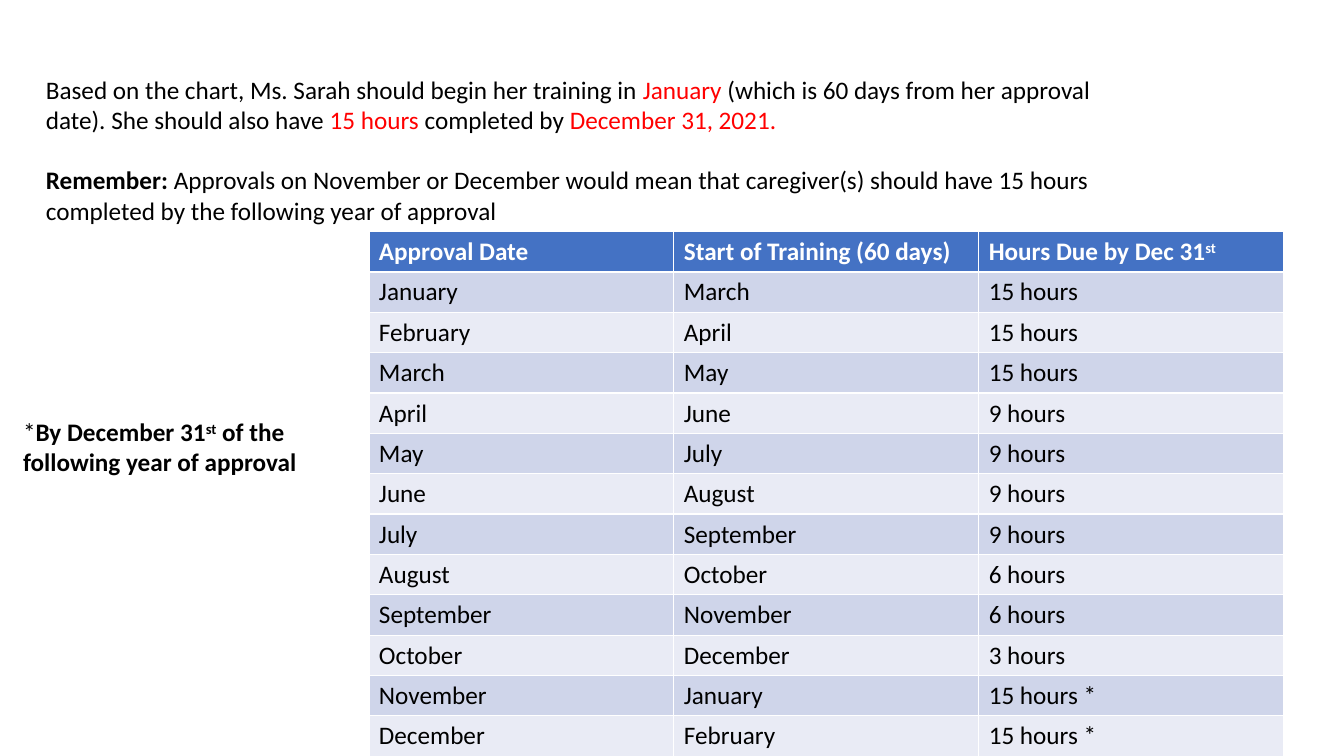
from dataclasses import dataclass

import pptx
import pptx.dml.color
import pptx.enum.text
import pptx.util

Pt = pptx.util.Pt


@dataclass(frozen=True)
class Theme:
    font: str = "Calibri"
    size: float = 18
    text: str = "000000"
    accent: str = "FF0000"
    header_text: str = "FFFFFF"
    header_fill: str = "4472C4"
    bands: tuple = ("CFD5EA", "E9EBF5")


THEME = Theme()
MONTHS = ["January", "February", "March", "April", "May", "June", "July",
          "August", "September", "October", "November", "December"]
HOURS = ["15 hours"] * 3 + ["9 hours"] * 4 + ["6 hours"] * 2 + ["3 hours"] + ["15 hours *"] * 2


def rgb(value):
    return pptx.dml.color.RGBColor.from_string(value)


def add_run(p, text, color=THEME.text, bold=False, superscript=False):
    r = p.add_run()
    r.text = text
    r.font.name = THEME.font
    r.font.size = Pt(THEME.size)
    r.font.bold = bold
    r.font.color.rgb = rgb(color)
    if superscript:
        r._r.get_or_add_rPr().set("baseline", "30000")


def add_text(s, box, paragraphs, gap=0):
    """Place a text box; each paragraph is a list of (text, run options)."""
    tf = s.shapes.add_textbox(*(Pt(v) for v in box)).text_frame
    tf.word_wrap = True
    tf.auto_size = pptx.enum.text.MSO_AUTO_SIZE.SHAPE_TO_FIT_TEXT
    for i, runs in enumerate(paragraphs):
        p = tf.add_paragraph() if i else tf.paragraphs[0]
        if i:
            p.space_before = Pt(gap)
        for text, options in runs:
            add_run(p, text, **options)


def add_answer(s, box):
    red = {"color": THEME.accent}
    add_text(s, box, [
        [("Based on the chart, Ms. Sarah should begin her training in ", {}),
         ("January", red),
         (" (which is 60 days from her approval date). She should also have ", {}),
         ("15 hours ", red),
         ("completed by ", {}),
         ("December 31, 2021.", red)],
        [("Remember: ", {"bold": True}),
         ("Approvals on November or December would mean that caregiver(s) should have "
          "15 hours completed by the following year of approval", {})],
    ], gap=21.6)


def add_footnote(s, box):
    bold = {"bold": True}
    add_text(s, box, [[("*", {}), ("By December 31", bold),
                       ("st", {"bold": True, "superscript": True}),
                       (" of the following year of approval", bold)]])


def add_schedule(s, box):
    """Table of approval month, training start two months later, and hours due."""
    headers = ["Approval Date", "Start of Training (60 days)", "Hours Due by Dec 31"]
    rows = [headers] + [[month, MONTHS[(i + 2) % 12], HOURS[i]]
                        for i, month in enumerate(MONTHS)]
    left, top, width, height = box
    table = s.shapes.add_table(len(rows), len(headers), Pt(left), Pt(top),
                               Pt(width), Pt(height)).table
    for column in table.columns:
        column.width = Pt(width / len(headers))
    for i, values in enumerate(rows):
        table.rows[i].height = Pt(height / len(rows))
        is_header = i == 0
        fill = THEME.header_fill if is_header else THEME.bands[(i - 1) % 2]
        color = THEME.header_text if is_header else THEME.text
        for j, value in enumerate(values):
            cell = table.cell(i, j)
            cell.fill.solid()
            cell.fill.fore_color.rgb = rgb(fill)
            add_run(cell.text_frame.paragraphs[0], value, color, is_header)
    add_run(table.cell(0, 2).text_frame.paragraphs[0], "st",
            THEME.header_text, bold=True, superscript=True)


def main():
    prs = pptx.Presentation()
    prs.slide_width, prs.slide_height = Pt(960), Pt(540)
    s = prs.slides.add_slide(prs.slide_layouts[6])
    add_answer(s, (25.7, 49.2, 806.4, 116.6))
    add_schedule(s, (263.5, 165.4, 653.4, 374.4))
    add_footnote(s, (9.4, 294, 210, 50.9))
    prs.save("out.pptx")


if __name__ == "__main__":
    main()
